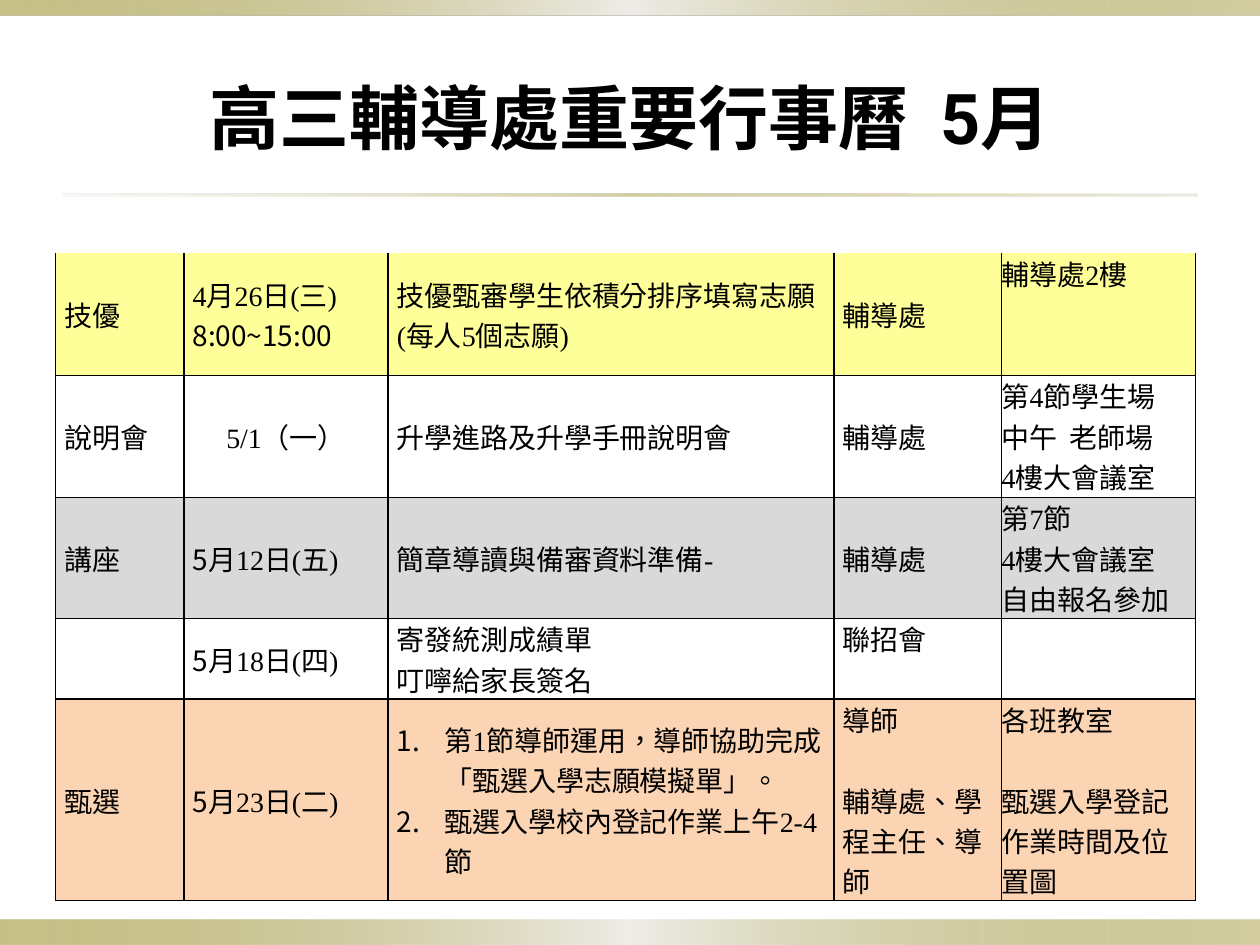
from lxml import etree
from pptx import Presentation
from pptx import util as u
from pptx.dml.color import RGBColor
from pptx.enum import shapes, text
from pptx.oxml import parse_xml
from pptx.oxml.ns import nsdecls, qn

COLOURS = {"black": "000000", "white": "FFFFFF", "yellow": "FFFF99", "grey": "D9D9D9",
           "peach": "FBD4B4", "olive": "918415", "pale": "EEEDE8", "sand": "DCD9CC"}
SERIF, SANS = "Times New Roman", "Noto Sans CJK SC"
BODY_SIZE, BODY_LINE = u.Pt(16), u.Pt(23)


def style(font, size, name=None, bold=None):
    font.size, font.bold = size, bold
    font.color.rgb = RGBColor.from_string(COLOURS["black"])
    if name:
        font.name = name


def add_border(cell, side, position, visible):
    paint = f'<a:solidFill><a:srgbClr val="{COLOURS["black"]}"/></a:solidFill>' if visible else "<a:noFill/>"
    cell._tc.get_or_add_tcPr().insert(position, parse_xml(
        f'<a:ln{side} {nsdecls("a")} w="{u.Pt(1)}">{paint}</a:ln{side}>'))


presentation = Presentation()
presentation.slide_width, presentation.slide_height = u.Inches(10), u.Inches(7.5)
slide = presentation.slides.add_slide(presentation.slide_layouts[6])

# Gradient bands at the bottom and top, and the rule under the title
band_stops = [("olive", 50), ("pale", 100), ("olive", 40)]
rule_stops = [("sand", 20), ("olive", 40), ("sand", 50)]
for left, top, width, height, stops in [(0, 7.3, 10, 0.2, band_stops),
                                        (0, 0, 10, 0.12, band_stops),
                                        (0.5, 1.54, 9, 0.02, rule_stops)]:
    shape = slide.shapes.add_shape(shapes.MSO_SHAPE.RECTANGLE,
                                   *map(u.Inches, (left, top, width, height)))
    shape.shadow.inherit = False
    shape.line.fill.background()
    shape.fill.background()
    stop_xml = "".join(
        f'<a:gs pos="{index * 50000}"><a:srgbClr val="{COLOURS[colour]}">'
        f'<a:alpha val="{opacity * 1000}"/></a:srgbClr></a:gs>'
        for index, (colour, opacity) in enumerate(stops))
    properties = shape._element.spPr
    properties.replace(properties.find(qn("a:noFill")), parse_xml(
        f'<a:gradFill {nsdecls("a")} rotWithShape="1"><a:gsLst>{stop_xml}</a:gsLst>'
        '<a:lin ang="0" scaled="1"/></a:gradFill>'))

# Title
title = slide.shapes.add_textbox(*map(u.Inches, (0.5, 0.3, 9, 1.25))).text_frame
title.word_wrap = True
title.vertical_anchor = text.MSO_ANCHOR.MIDDLE
paragraph = title.paragraphs[0]
paragraph.text = "高三輔導處重要行事曆  5月"
paragraph.alignment = text.PP_ALIGN.CENTER
style(paragraph.font, u.Pt(40), "Roboto", True)

# Calendar: one line per paragraph; "|" ends a sans part, "#" numbers, "^" leaves a line free above
column_widths = [1.02, 1.62, 3.54, 1.33, 1.54]
calendar = [
    (0.97, "yellow", ["技優", "4月26日(三)\n8:00~15:00|", "技優甄審學生依積分排序填寫志願(每人5個志願)",
                      "輔導處", "輔導處2樓"]),
    (0.97, "white", ["說明會", "5/1（一）", "升學進路及升學手冊說明會", "輔導處",
                     "第4節學生場\n中午  老師場\n4樓大會議室"]),
    (0.96, "grey", ["講座", "5|月12日(五)", "簡章導讀與備審資料準備-", "輔導處",
                    "第7節\n4樓大會議室\n自由報名參加"]),
    (0.64, "white", ["", "5|月18日(四)", "寄發統測成績單\n叮嚀給家長簽名", "聯招會", ""]),
    (1.6, "peach", ["甄選", "5|月23日(二)",
                    "#第1節導師運用，導師協助完成「甄選入學志願模擬單」。\n#甄選入學校內登記作業上午2-4節",
                    "導師\n^輔導處、學程主任、導師", "各班教室\n^甄選入學登記作業時間及位置圖"]),
]
table = slide.shapes.add_table(len(calendar), len(column_widths), u.Inches(0.44), u.Inches(2.01),
                               u.Inches(sum(column_widths)),
                               u.Inches(sum(row[0] for row in calendar))).table
table.first_row = table.horz_banding = False
for column, width in zip(table.columns, column_widths):
    column.width = u.Inches(width)

for row_index, (height, colour, entries) in enumerate(calendar):
    table.rows[row_index].height = u.Inches(height)
    for column_index, entry in enumerate(entries):
        cell = table.cell(row_index, column_index)
        cell.fill.solid()
        cell.fill.fore_color.rgb = RGBColor.from_string(COLOURS[colour])
        for position, side in enumerate("LRTB"):
            add_border(cell, side, position, side != "T" or row_index > 0)
        is_place = column_index == len(column_widths) - 1
        cell.margin_left = cell.margin_right = u.Inches(0 if is_place else 0.07)
        cell.margin_top = cell.margin_bottom = 0
        at_top = is_place or entry == "聯招會"
        cell.vertical_anchor = text.MSO_ANCHOR.TOP if at_top else text.MSO_ANCHOR.MIDDLE

        for line_index, line in enumerate(entry.split("\n")):
            frame = cell.text_frame
            paragraph = frame.add_paragraph() if line_index else frame.paragraphs[0]
            if line.startswith("#"):
                properties = paragraph._p.get_or_add_pPr()
                properties.set("marL", str(u.Inches(0.38)))
                properties.set("indent", str(-u.Inches(0.38)))
                etree.SubElement(properties, qn("a:buFont")).set("typeface", SANS)
                etree.SubElement(properties, qn("a:buAutoNum")).set("type", "arabicPeriod")
            if line.startswith("^"):
                paragraph.space_before = BODY_LINE
            if line.startswith("5/1"):
                paragraph.alignment = text.PP_ALIGN.CENTER
            sans, divider, serif = line.lstrip("#^").rpartition("|")
            parts = [(part, name) for part, name in ((sans, SANS), (serif, SERIF)) if part]
            for part, name in parts:
                run = paragraph.add_run()
                run.text = part
                # Traditional Chinese punctuation and line breaking
                run._r.get_or_add_rPr().set("lang", "zh-TW")
                if len(parts) > 1:
                    run.font.name = name
            style(paragraph.font, BODY_SIZE, parts[0][1] if len(parts) == 1 else None)

presentation.save("out.pptx")
